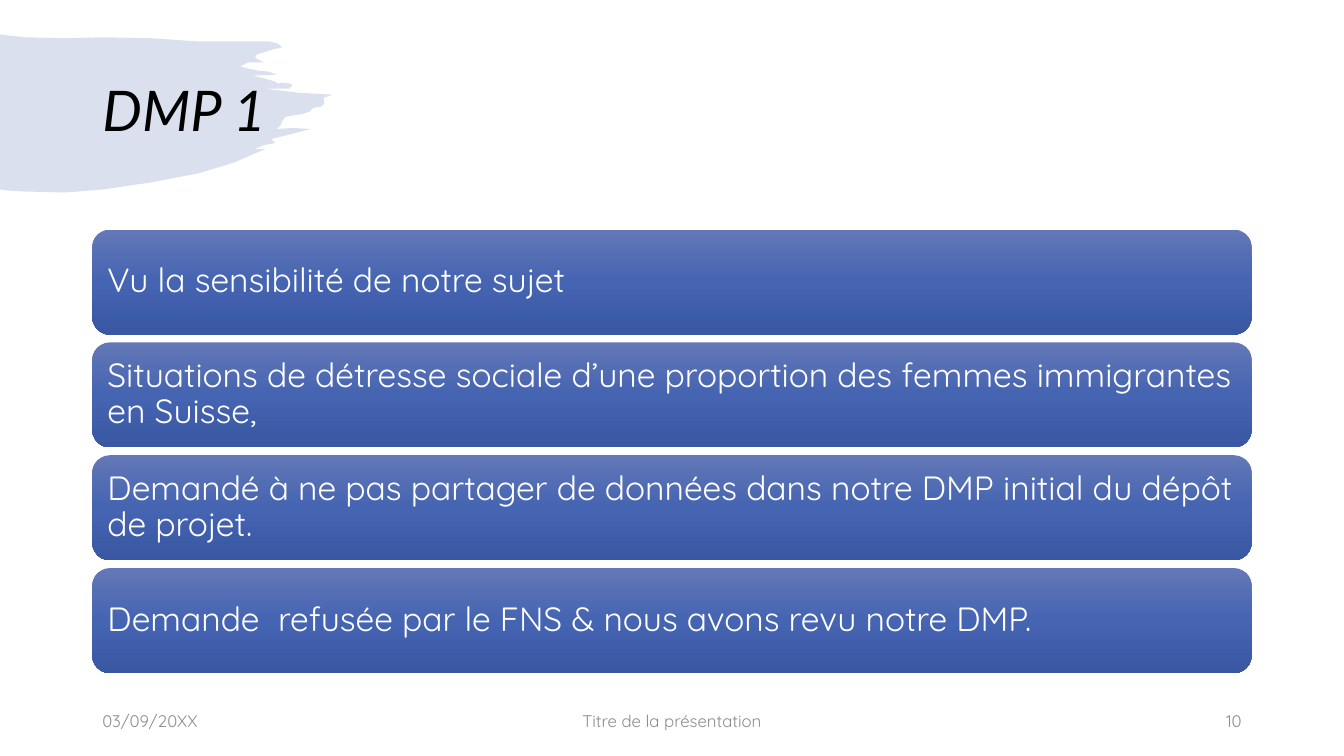
from copy import deepcopy
from lxml import etree
from pptx import Presentation
from pptx.dml.color import RGBColor
from pptx.enum.shapes import MSO_SHAPE
from pptx.enum.text import MSO_ANCHOR, PP_ALIGN
from pptx.oxml.ns import qn
from pptx.util import Pt

LEFT, CENTER, RIGHT = PP_ALIGN.LEFT, PP_ALIGN.CENTER, PP_ALIGN.RIGHT
MIDDLE = MSO_ANCHOR.MIDDLE
ROUNDED = MSO_SHAPE.ROUNDED_RECTANGLE

TITLE = "DMP 1"
CARDS = [
    "Vu la sensibilité de notre sujet",
    "Situations de détresse sociale d’une proportion des femmes immigrantes en Suisse,",
    "Demandé à ne pas partager de données dans notre DMP initial du dépôt de projet.",
    "Demande  refusée par le FNS & nous avons revu notre DMP.",
]
FOOTERS = [
    ("03/09/20XX", 66, 216, LEFT),
    ("Titre de la présentation", 318, 324, CENTER),
    ("10", 678, 216, RIGHT),
]
GRADIENT = [(0, "6378B7"), (0.5, "4564B1"), (1, "3957A2")]
BRUSH_UNIT = 0.72
BRUSH = [
    (0, 34), (6, 35), (25, 37), (66, 38), (102, 37), (151, 38), (194, 41),
    (248, 41), (266, 41), (275, 43), (280, 47), (271, 49), (255, 54), (253, 57),
    (256, 59), (262, 62), (246, 62), (238, 66), (246, 68), (256, 70), (266, 71),
    (275, 74), (251, 75), (263, 78), (273, 81), (276, 83), (280, 82), (288, 83),
    (290, 85), (287, 88), (284, 88), (263, 88), (296, 92), (330, 94), (321, 97),
    (322, 103), (318, 106), (311, 107), (307, 111), (300, 113), (283, 116),
    (280, 120), (278, 125), (274, 128), (291, 127), (308, 128), (289, 133),
    (269, 138), (273, 142), (262, 144), (252, 148), (263, 148), (233, 161),
    (197, 172), (150, 181), (102, 188), (65, 191), (23, 190), (7, 189), (0, 188),
]
CARD_LEFT, CARD_TOP, CARD_WIDTH, CARD_HEIGHT, CARD_GAP = 66, 164, 828, 75, 5.6


def color(value):
    return RGBColor.from_string(value)


def write(shape, text, font, size, ink, align=LEFT, spacing=1.0):
    frame = shape.text_frame
    frame.word_wrap = True
    frame.vertical_anchor = MIDDLE
    frame.text = text
    paragraph = frame.paragraphs[0]
    paragraph.alignment = align
    paragraph.line_spacing = spacing
    run = paragraph.runs[0]
    run.font.name = font
    run.font.size = Pt(size)
    run.font.color.rgb = color(ink)
    return run


def add_brush(slide):
    builder = slide.shapes.build_freeform(*BRUSH[0], scale=Pt(BRUSH_UNIT))
    builder.add_line_segments(BRUSH[1:], close=True)
    brush = builder.convert_to_shape()
    brush.shadow.inherit = False
    brush.line.fill.background()
    brush.fill.solid()
    brush.fill.fore_color.rgb = color("4A66AC")
    fill_color = brush._element.spPr.find(qn("a:solidFill"))[0]
    etree.SubElement(fill_color, qn("a:alpha"), val="20000")


def add_card(slide, index, text):
    top = CARD_TOP + index * (CARD_HEIGHT + CARD_GAP)
    card = slide.shapes.add_shape(
        ROUNDED, Pt(CARD_LEFT), Pt(top), Pt(CARD_WIDTH), Pt(CARD_HEIGHT))
    card.shadow.inherit = False
    card.line.fill.background()
    card.fill.gradient()
    card.fill.gradient_angle = 270
    stops = card._element.spPr.find(qn("a:gradFill")).find(qn("a:gsLst"))
    stops.append(deepcopy(stops[0]))
    for stop, (position, value) in zip(card.fill.gradient_stops, GRADIENT):
        stop.position = position
        stop.color.rgb = color(value)
    write(card, text, "Quicksand", 24, "FFFFFF", spacing=0.9)


def main():
    presentation = Presentation()
    presentation.slide_width, presentation.slide_height = Pt(960), Pt(540)
    slide = presentation.slides.add_slide(presentation.slide_layouts[5])

    add_brush(slide)
    title = slide.shapes.title
    title.left, title.top, title.width, title.height = Pt(66), Pt(29), Pt(828), Pt(104)
    write(title, TITLE, "Lato", 40, "000000", spacing=0.9).font.italic = True
    slide.shapes[-1]._element.addnext(title._element)

    for text, left, width, align in FOOTERS:
        footer = slide.shapes.add_textbox(Pt(left), Pt(500.5), Pt(width), Pt(29))
        write(footer, text, "Quicksand", 12, "8C8C8C", align)
    for index, text in enumerate(CARDS):
        add_card(slide, index, text)

    presentation.save("out.pptx")


if __name__ == "__main__":
    main()
